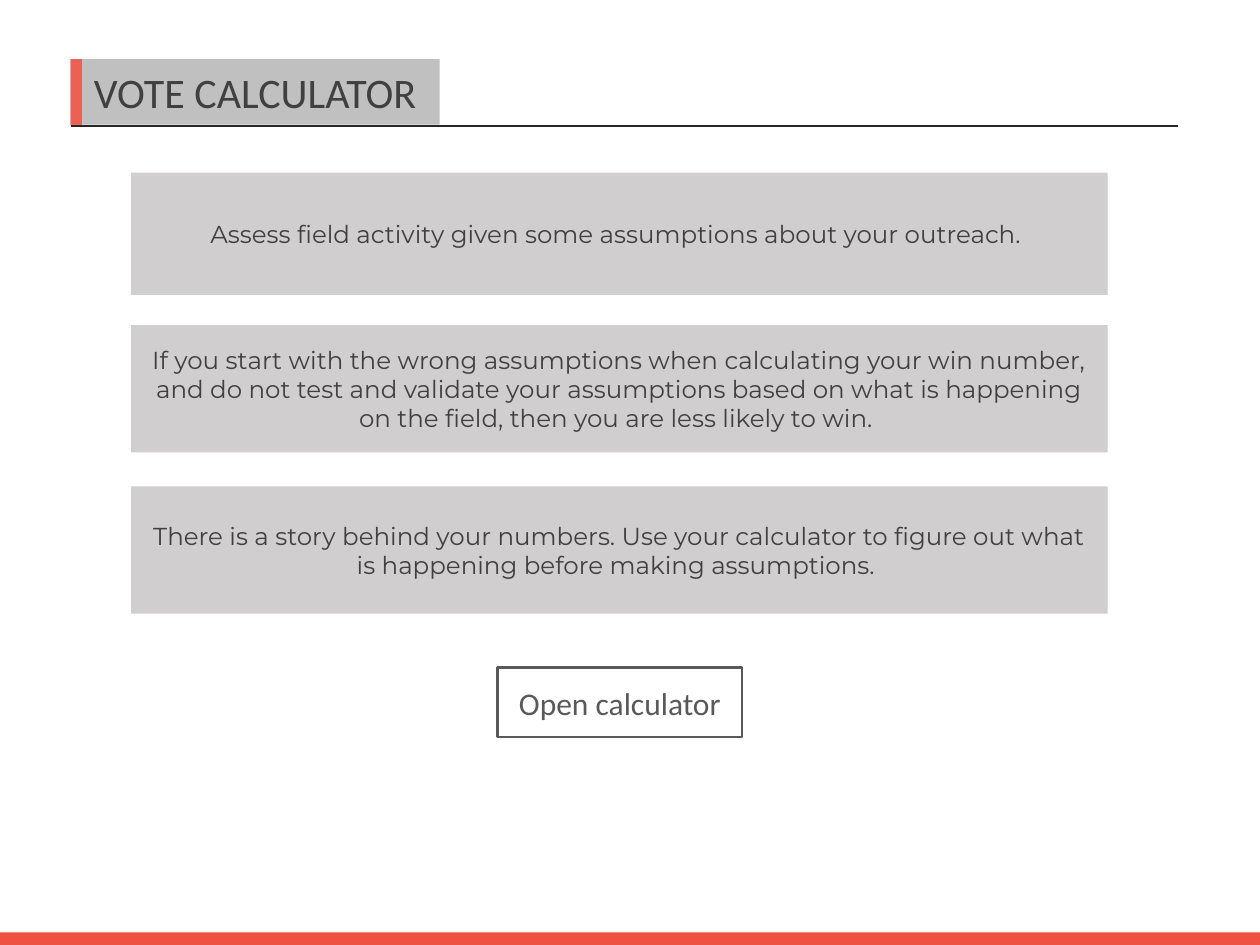
from lxml.etree import SubElement
from pptx import Presentation
from pptx.dml.color import RGBColor
from pptx.enum.shapes import MSO_CONNECTOR as Connector, MSO_SHAPE as Shape
from pptx.enum.text import MSO_ANCHOR as Anchor, PP_ALIGN as Align
from pptx.oxml.ns import qn
from pptx.util import Inches, Pt

COLORS = {
    "paper": "FFFFFF",
    "footer": "ED5340",
    "accent": "FC4030",
    "ink": "404040",
    "rule": "262626",
    "panel": "D0CECE",
    "button": "595959",
}
COLUMNS, ROWS = 100, 75
HEADING_FONT, BODY_FONT = "Calibri", "Montserrat"

PANELS = [
    (13.7, 9.7, "Assess field activity given some assumptions about your outreach. "),
    (25.8, 10.1, "If you start with the wrong assumptions when calculating your win number, "
     "and do not test and validate your assumptions based on what is happening "
     "on the field, then you are less likely to win. "),
    (38.6, 10.1, "There is a story behind your numbers. Use your calculator to figure out "
     "what is happening before making assumptions. "),
]


class SlideBuilder:
    def __init__(self, presentation):
        self.column = presentation.slide_width / COLUMNS
        self.row = presentation.slide_height / ROWS
        self.slide = presentation.slides.add_slide(presentation.slide_layouts[6])
        background = self.slide.background.fill
        background.solid()
        background.fore_color.rgb = self.color("paper")

    def color(self, name):
        return RGBColor.from_string(COLORS[name])

    def place(self, column, row):
        return round(column * self.column), round(row * self.row)

    def box(self, column, row, columns, rows, fill=None, opacity=100, line=None):
        shape = self.slide.shapes.add_shape(
            Shape.RECTANGLE, *self.place(column, row), *self.place(columns, rows))
        shape.shadow.inherit = False
        if fill:
            shape.fill.solid()
            shape.fill.fore_color.rgb = self.color(fill)
            if opacity < 100:
                color = shape.fill._xPr.find(qn("a:solidFill"))[0]
                SubElement(color, qn("a:alpha")).set("val", str(opacity * 1000))
        else:
            shape.fill.background()
        if line:
            shape.line.color.rgb = self.color(line)
            shape.line.width = Pt(1.5)
        else:
            shape.line.fill.background()
        return shape

    def label(self, shape, text, size, font, color, side=0, edge=0.05):
        frame = shape.text_frame
        frame.word_wrap = True
        frame.vertical_anchor = Anchor.MIDDLE
        frame.margin_left = frame.margin_right = Inches(side)
        frame.margin_top = frame.margin_bottom = Inches(edge)
        paragraph = frame.paragraphs[0]
        paragraph.text = text
        paragraph.alignment = Align.CENTER
        paragraph.font.size = Pt(size)
        paragraph.font.name = font
        paragraph.font.color.rgb = self.color(color)

    def title(self, text):
        band = self.box(5.6, 4.7, 29.3, 5.2, "ink", opacity=33)
        self.label(band, text, 24, HEADING_FONT, "ink")
        self.box(5.6, 4.7, 0.9, 5.3, "accent", opacity=74)

    def rule(self, start, end, row):
        line = self.slide.shapes.add_connector(
            Connector.STRAIGHT, *self.place(start, row), *self.place(end, row))
        line.line.color.rgb = self.color("rule")
        line.line.width = Pt(0.75)
        SubElement(line._element.spPr, qn("a:effectLst"))

    def panel(self, row, rows, text):
        shape = self.box(10.4, row, 77.5, rows, "panel")
        self.label(shape, text, 14, BODY_FONT, "ink", side=0.14, edge=0.07)

    def button(self, text):
        shape = self.box(39.5, 53, 19.4, 5.5, line="button")
        self.label(shape, text, 18, HEADING_FONT, "button")


def main():
    presentation = Presentation()
    presentation.slide_width = Inches(10)
    presentation.slide_height = Inches(7.5)
    builder = SlideBuilder(presentation)
    builder.box(0, 74, COLUMNS, 1, "footer")
    builder.title("VOTE CALCULATOR")
    builder.rule(5.6, 93.5, 10)
    for row, rows, text in PANELS:
        builder.panel(row, rows, text)
    builder.button("Open calculator")
    presentation.save("out.pptx")


if __name__ == "__main__":
    main()
